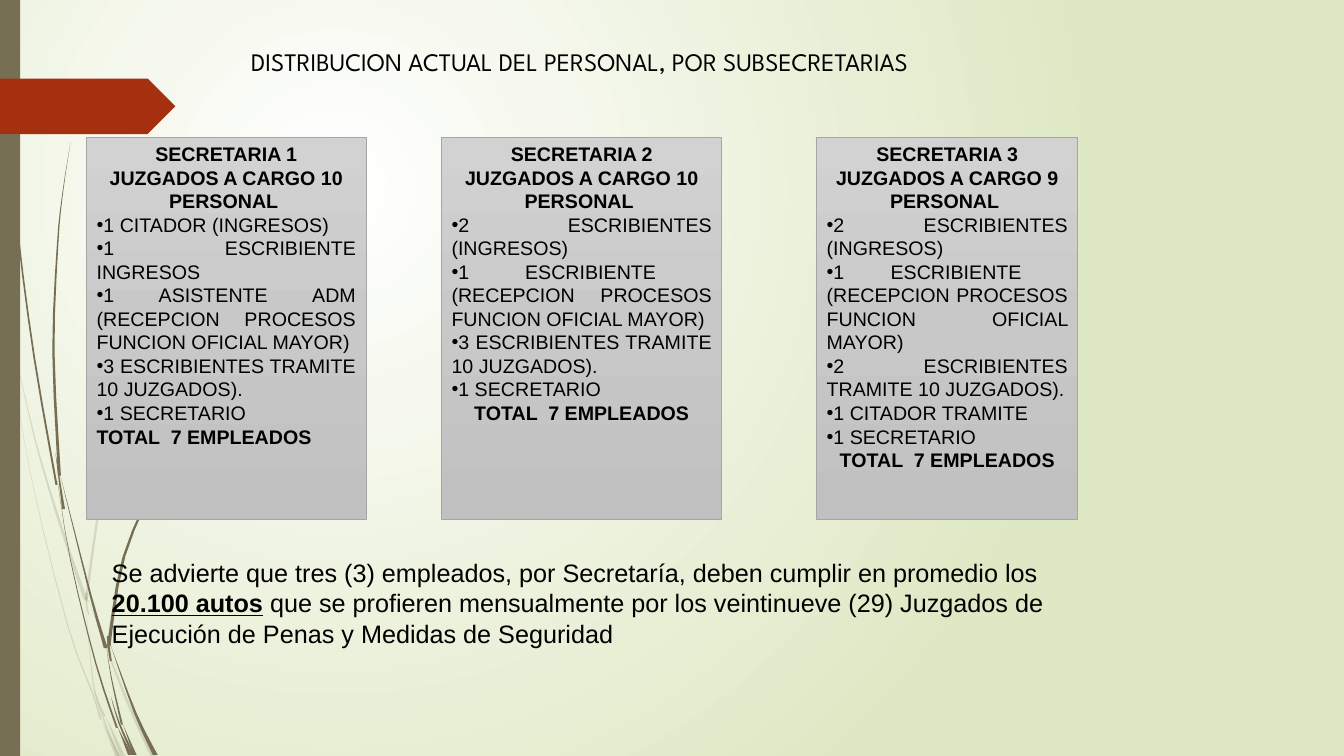
import pptx
import pptx.util
import pptx.dml.color
import pptx.enum.shapes
import pptx.enum.text
import pptx.oxml
import pptx.oxml.ns

Inches = pptx.util.Inches
Pt = pptx.util.Pt
ALIGN = pptx.enum.text.PP_ALIGN
SHAPE = pptx.enum.shapes.MSO_SHAPE
qn = pptx.oxml.ns.qn

COLORS = {
    "text": "000000", "olive": "766F54", "tag": "A53010", "border": "A5A5A5",
    "center": "FFFFFF", "edge": "DFE8C4",
    "card_top": "D2D2D2", "card_middle": "C8C8C8", "card_bottom": "C0C0C0",
}
TITLE = "DISTRIBUCION ACTUAL DEL PERSONAL, POR SUBSECRETARIAS"
RECEPTION = "(RECEPCION PROCESOS FUNCION OFICIAL MAYOR)"
TOTAL = "TOTAL  7 EMPLEADOS"
CARD_TOP, CARD_HEIGHT = 1.36, 3.79
# left, width, courts, staff, alignment of the total
CARDS = [
    (0.86, 2.77, 10, [
        "1 CITADOR (INGRESOS)", "1 ESCRIBIENTE INGRESOS", f"1 ASISTENTE ADM {RECEPTION}",
        "3 ESCRIBIENTES TRAMITE 10 JUZGADOS).", "1 SECRETARIO"], ALIGN.JUSTIFY),
    (4.38, 2.78, 10, [
        "2 ESCRIBIENTES (INGRESOS)", f"1 ESCRIBIENTE  {RECEPTION}",
        "3 ESCRIBIENTES TRAMITE 10 JUZGADOS).", "1 SECRETARIO"], ALIGN.CENTER),
    (8.1, 2.59, 9, [
        "2 ESCRIBIENTES (INGRESOS)", f"1 ESCRIBIENTE  {RECEPTION}",
        "2 ESCRIBIENTES TRAMITE 10 JUZGADOS).", "1 CITADOR TRAMITE ",
        "1 SECRETARIO"], ALIGN.CENTER),
]
# text, emphasised
NOTE = [
    ("Se advierte que tres (3) empleados, por Secretaría, deben cumplir en promedio los ", False),
    ("20.100 autos", True),
    (" que se profieren mensualmente por los veintinueve (29) Juzgados de "
     "Ejecución de Penas y Medidas de Seguridad", False),
]
# Blades of grass by opacity in percent: width at tip, width at root, points along the middle
BLADES = {
    20: [
        (0.02, 0.01, [(0.01, 2.9), (0.06, 3.2), (0.1, 3.5)]),
        (0, 0.04, [(0.14, 3.45), (0.35, 4.37), (0.6, 5.21), (0.85, 5.95)]),
        (0, 0.05, [(0.88, 5.96), (1.25, 6.93), (1.52, 7.51)]),
        (0, 0.05, [(1.05, 7.11), (1.22, 7.51)]),
        (0, 0.02, [(0.11, 3.5), (0.3, 4.69), (0.67, 6.2), (0.92, 6.88), (1, 7.14)]),
        (0, 0.02, [(0.85, 5.99), (0.89, 6.46), (0.94, 6.86), (1.04, 7.11)]),
        (0, 0.03, [(3.12, 1.53), (2.68, 1.98), (2.28, 2.45), (1.59, 3.48), (1.08, 4.61),
                   (0.87, 5.84), (0.87, 5.96)]),
        (0, 0.05, [(1.01, 7.14), (1.17, 7.51)]),
        (0.02, 0.01, [(0.86, 5.88), (0.86, 6), (0.88, 6.1)]),
        (0, 0.02, [(0.93, 6.83), (1, 7.06), (1.18, 7.51)]),
    ],
    100: [
        (0.01, 0.02, [(0.04, 0), (0.07, 1.1), (0.18, 2.33), (0.34, 3.55), (0.56, 4.81)]),
        (0, 0.04, [(0.6, 4.72), (0.9, 5.91), (1.05, 6.43)]),
        (0, 0.05, [(1.1, 6.41), (1.34, 7.07), (1.54, 7.49)]),
        (0, 0.02, [(0.57, 4.77), (0.7, 5.56), (0.95, 6.58), (1.16, 7.22)]),
        (0, 0.03, [(0.7, 1.41), (0.62, 1.93), (0.57, 2.45), (0.53, 3.49), (0.59, 4.72)]),
        (0, 0.03, [(1.22, 7.19), (1.34, 7.49)]),
        (0, 0.03, [(0.55, 4.49), (0.59, 4.77), (0.63, 5.05)]),
        (0, 0.04, [(2.6, 3.44), (2.31, 3.74), (2.04, 4.06), (1.57, 4.75), (1.23, 5.52),
                   (1.09, 6.32), (1.09, 6.41)]),
        (0, 0.04, [(1.17, 7.22), (1.29, 7.49)]),
        (0, 0.02, [(1.06, 6.45), (1.11, 6.75), (1.21, 7.19)]),
        (0.02, 0.02, [(1.07, 6.31), (1.08, 6.43), (1.1, 6.56)]),
        (0, 0.03, [(1.1, 6.91), (1.18, 7.17), (1.32, 7.49)]),
    ],
}
STEPS = 3


def rgb(name):
    return pptx.dml.color.RGBColor.from_string(COLORS[name])


def xml(tag, attributes="", inner=""):
    namespace = pptx.oxml.ns.nsdecls("a")
    return pptx.oxml.parse_xml(f"<a:{tag} {namespace} {attributes}>{inner}</a:{tag}>")


def set_gradient(fill, element, stops, direction):
    """Fill with (percent, colour name) stops."""
    fill.gradient()
    marks = "".join(f'<a:gs pos="{percent * 1000}"><a:srgbClr val="{COLORS[name]}"/></a:gs>'
                    for percent, name in stops)
    old_fill = element.find(".//" + qn("a:gradFill"))
    new_fill = xml("gradFill", 'rotWithShape="1"', f"<a:gsLst>{marks}</a:gsLst>{direction}")
    old_fill.getparent().replace(old_fill, new_fill)


def paint(shape, color):
    shape.shadow.inherit = False
    shape.fill.solid()
    shape.fill.fore_color.rgb = rgb(color)
    shape.line.fill.background()


def style(run, size, bold=False, font="Arial"):
    run.font.name = font
    run.font.size = Pt(size)
    run.font.bold = bold
    run.font.color.rgb = rgb("text")


def smooth(points):
    """Pass a Catmull-Rom curve through the points."""
    padded = [points[0], *points, points[-1]]
    curve = []
    for corners in zip(padded, padded[1:], padded[2:], padded[3:]):
        for t in (step / STEPS for step in range(STEPS)):
            curve.append(tuple(
                0.5 * (2 * q + (r - p) * t + (2 * p - 5 * q + 4 * r - s) * t ** 2
                       + (3 * q - p - 3 * r + s) * t ** 3)
                for p, q, r, s in zip(*corners)))
    return curve + [points[-1]]


def add_blade(slide, opacity, tip, root, points):
    curve = smooth(points) if len(points) > 2 else points
    last = len(curve) - 1
    halves = [(tip + (root - tip) * i / last) / 2 for i in range(last + 1)]
    left = [(x - half, y) for (x, y), half in zip(curve, halves)]
    right = [(x + half, y) for (x, y), half in zip(curve, halves)]
    outline = [(Inches(x), Inches(y)) for x, y in left + right[::-1]]
    builder = slide.shapes.build_freeform(*outline[0])
    builder.add_line_segments(outline[1:], close=True)
    blade = builder.convert_to_shape()
    paint(blade, "olive")
    if opacity < 100:
        color = blade._element.spPr.find(".//" + qn("a:srgbClr"))
        color.append(xml("alpha", f'val="{opacity * 1000}"'))


def add_card(slide, number, left, width, courts, staff, total_alignment):
    card = slide.shapes.add_shape(SHAPE.RECTANGLE, Inches(left), Inches(CARD_TOP),
                                  Inches(width), Inches(CARD_HEIGHT))
    card.shadow.inherit = False
    stops = [(0, "card_top"), (50, "card_middle"), (100, "card_bottom")]
    set_gradient(card.fill, card._element, stops, '<a:lin ang="5400000"/>')
    card.line.color.rgb = rgb("border")
    card.line.width = Pt(0.5)
    heading = [f"SECRETARIA {number}", f"JUZGADOS A CARGO {courts}", "PERSONAL "]
    frame = card.text_frame
    frame.vertical_anchor = pptx.enum.text.MSO_ANCHOR.TOP
    frame.text = "\n".join(heading + staff + [TOTAL])
    for index, paragraph in enumerate(frame.paragraphs):
        is_staff = len(heading) <= index < len(heading) + len(staff)
        paragraph.alignment = ALIGN.JUSTIFY if is_staff else ALIGN.CENTER
        style(paragraph.runs[0], 14, bold=not is_staff)
        if is_staff:
            properties = paragraph._p.get_or_add_pPr()
            properties.append(xml("buFont", 'typeface="Arial"'))
            properties.append(xml("buChar", 'char="•"'))
    frame.paragraphs[-1].alignment = total_alignment


def main():
    presentation = pptx.Presentation()
    presentation.slide_width, presentation.slide_height = Inches(13.33), Inches(7.5)
    slide = presentation.slides.add_slide(presentation.slide_layouts[5])
    # Background
    glow = '<a:path path="circle"><a:fillToRect l="50000" t="50000" r="100000" b="100000"/></a:path>'
    set_gradient(slide.background.fill, slide._element, [(0, "center"), (100, "edge")], glow)
    # Grass, side bar and tag
    for opacity, blades in BLADES.items():
        for blade in blades:
            add_blade(slide, opacity, *blade)
    bar = slide.shapes.add_shape(SHAPE.RECTANGLE, 0, 0, Inches(0.2), Inches(7.5))
    paint(bar, "olive")
    tag = slide.shapes.add_shape(SHAPE.PENTAGON, 0, Inches(0.78), Inches(1.74), Inches(0.55))
    paint(tag, "tag")
    # Cards
    for number, card in enumerate(CARDS, start=1):
        add_card(slide, number, *card)
    # Title
    title = slide.shapes.title
    title.left, title.top, title.width, title.height = map(Inches, (0.25, 0.41, 11, 0.4))
    title.text_frame.text = TITLE
    title.text_frame.auto_size = pptx.enum.text.MSO_AUTO_SIZE.NONE
    title.text_frame.vertical_anchor = pptx.enum.text.MSO_ANCHOR.MIDDLE
    title.text_frame.paragraphs[0].alignment = ALIGN.CENTER
    style(title.text_frame.paragraphs[0].runs[0], 18, font="League Spartan")
    # Closing note
    note = slide.shapes.add_textbox(*map(Inches, (1.01, 5.48, 9.49, 1.01)))
    note.text_frame.word_wrap = True
    for text, emphasised in NOTE:
        run = note.text_frame.paragraphs[0].add_run()
        run.text = text
        style(run, 18, bold=emphasised)
        run.font.underline = emphasised
    presentation.save("out.pptx")


if __name__ == "__main__":
    main()
